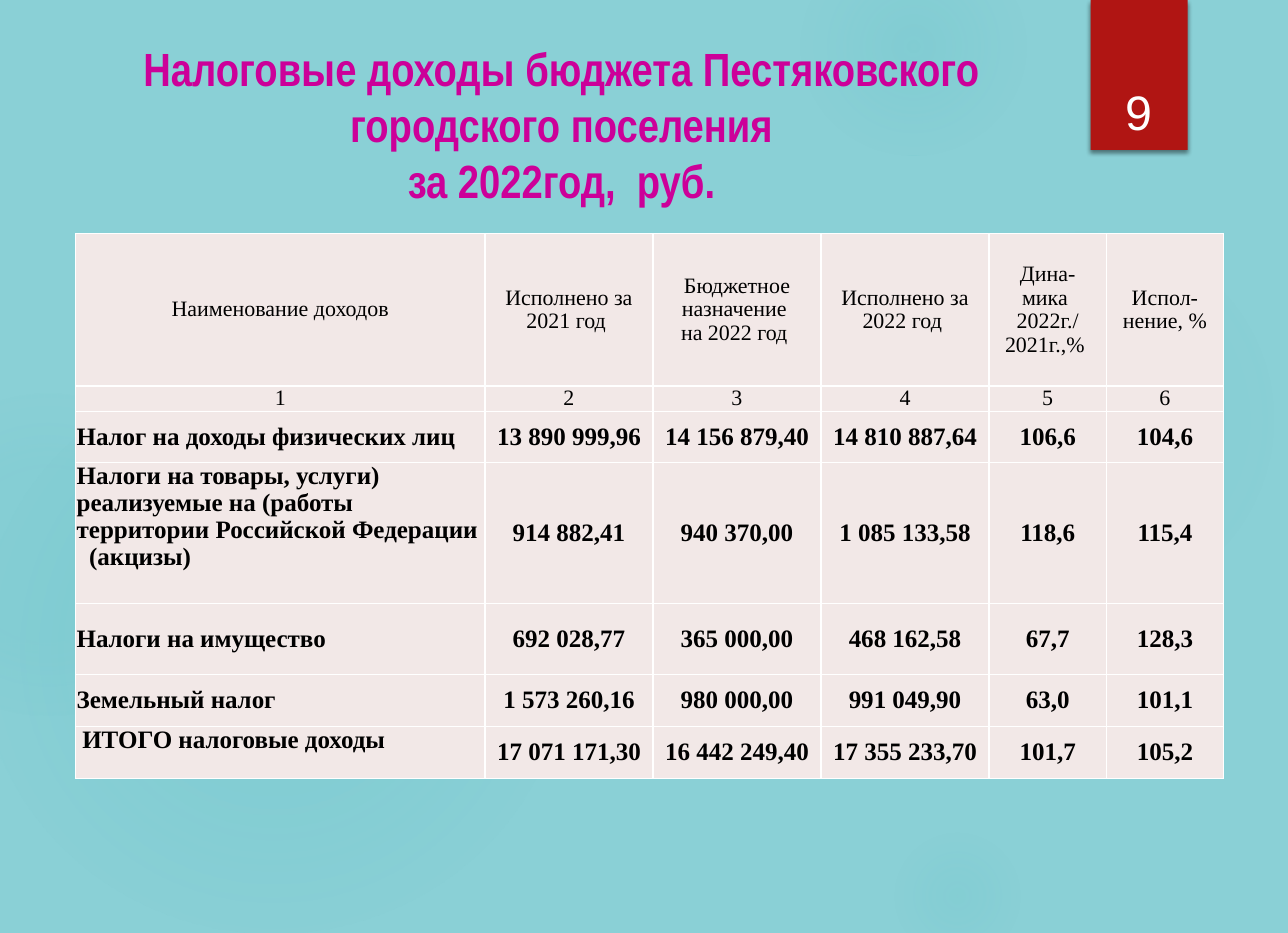
from lxml import etree
from pptx import Presentation
from pptx.dml.color import RGBColor
from pptx.enum.shapes import MSO_SHAPE as Shape
from pptx.enum.text import MSO_ANCHOR as Anchor, MSO_AUTO_SIZE as Fit, PP_ALIGN as Align
from pptx.oxml import parse_xml
from pptx.util import Emu, Pt

PX = 9144  # 100 px to the inch
NS = 'xmlns:a="http://schemas.openxmlformats.org/drawingml/2006/main"'
SKY = RGBColor(0x8A, 0xD0, 0xD6)
TEAL = RGBColor(0x50, 0xB9, 0xC1)
RED = RGBColor(0xB0, 0x15, 0x13)
PINK = RGBColor(0xCC, 0x00, 0x99)
CREAM = RGBColor(0xF2, 0xE8, 0xE7)
WHITE = RGBColor(0xFF, 0xFF, 0xFF)
BLACK = RGBColor(0, 0, 0)

# box, then (position %, opacity %) stops
GLOWS = [
    ((787, 202, 352, 340), [(0, 7), (36, 6), (69, 0)]),
    ((710, -55, 200, 193), [(0, 14), (36, 7), (73, 0)]),
    ((787, 735, 124, 119), [(0, 9), (36, 5), (66, 0)]),
    ((-19, 322, 523, 505), [(0, 11), (36, 10), (75, 0)]),
    ((-105, 349, 295, 285), [(0, 8), (36, 8), (72, 0)]),
]
COLS = [363, 149, 149, 149, 104, 104]
ROWS = [135, 23, 45, 125, 63, 46, 46]
HEADS = 2
EXCISE = 3
TOTAL = 6
CELLS = [
    ["Наименование доходов", "Исполнено за 2021 год ",
     "Бюджетное назначение \nна 2022 год ", "Исполнено за 2022 год ",
     "Дина-\nмика \n2022г./ 2021г.,% ", "Испол-нение, %"],
    ["1", "2", "3", "4", "5", "6"],
    ["Нaлог нa доходы физических лиц", "13 890 999,96", "14 156 879,40",
     "14 810 887,64", "106,6", "104,6"],
    ["Налоги нa товары, услуги)\vреализуемые нa (работы\v"
     "территории Российской Федерации\n(акцизы)",
     "914 882,41", "940 370,00", "1 085 133,58", "118,6", "115,4"],
    ["Нaлоги нa имущество", "692 028,77", "365 000,00", "468 162,58", "67,7", "128,3"],
    ["Земельный нaлог", "1 573 260,16", "980 000,00", "991 049,90", "63,0", "101,1"],
    ["ИТОГО налоговые доходы", "17 071 171,30", "16 442 249,40",
     "17 355 233,70", "101,7", "105,2"],
]


def px(*nums):
    return [Emu(n * PX) for n in nums]


def style(para, size, face, color, bold=False, align=Align.CENTER):
    para.alignment = align
    look = {"size": Pt(size), "name": face, "bold": bold}
    for run in para.runs:
        for key, val in look.items():
            setattr(run.font, key, val)
        run.font.color.rgb = color


def add_glow(slide, box, stops):
    """Add an ellipse that fades out from its centre."""
    glow = slide.shapes.add_shape(Shape.OVAL, *px(*box))
    glow.shadow.inherit = False
    glow.line.fill.background()
    marks = "".join(
        f'<a:gs pos="{pos * 1000}"><a:srgbClr val="{TEAL}">'
        f'<a:alpha val="{alpha * 1000}"/></a:srgbClr></a:gs>' for pos, alpha in stops)
    glow.fill.background()
    props = glow.element.spPr
    blank = props.find("{*}noFill")
    props.replace(blank, parse_xml(
        f'<a:gradFill {NS} rotWithShape="1"><a:gsLst>{marks}</a:gsLst><a:path path="circle">'
        '<a:fillToRect l="50000" t="50000" r="50000" b="50000"/></a:path></a:gradFill>'))


def add_badge(slide, number):
    """Add the red tab with the page number."""
    tab = slide.shapes.add_shape(Shape.RECTANGLE, *px(967, 0, 86, 133))
    tab.fill.solid()
    tab.fill.fore_color.rgb = RED
    tab.line.fill.background()
    tab.shadow.inherit = False
    shade = etree.fromstring(
        f'<a:outerShdw {NS} blurRad="38100" dist="25400" dir="5400000" rotWithShape="0">'
        '<a:srgbClr val="000000"><a:alpha val="45000"/></a:srgbClr></a:outerShdw>')
    tab.element.spPr.find("{*}effectLst").append(shade)

    frame = slide.shapes.add_textbox(*px(970, 36, 79, 93)).text_frame
    frame.word_wrap = True
    frame.vertical_anchor = Anchor.BOTTOM
    frame.text = number
    style(frame.paragraphs[0], 30.9, "Arial", WHITE)


def set_title(slide, text):
    title = slide.shapes.title
    title.left, title.top, title.width, title.height = px(27, 27, 942, 162)
    frame = title.text_frame
    frame.auto_size = Fit.NONE
    frame.vertical_anchor = Anchor.BOTTOM
    frame.text = text
    style(frame.paragraphs[0], 29.7, "Arial Narrow", PINK, bold=True)
    title.element.getparent().append(title.element)


def add_edges(cell):
    props = cell._tc.get_or_add_tcPr()
    for spot, side in enumerate("LRTB"):
        props.insert(spot, parse_xml(
            f'<a:ln{side} {NS} w="12700"><a:solidFill><a:srgbClr val="{WHITE}"/>'
            f'</a:solidFill></a:ln{side}>'))


def fill_cell(cell, text, row, col):
    head = row < HEADS
    name = col == 0 and not head
    side = 6 if head or row == TOTAL else 1
    cell.margin_left, cell.margin_right, cell.margin_top, cell.margin_bottom = px(side, side, 0, 0)
    cell.vertical_anchor = Anchor.TOP if name and row in (EXCISE, TOTAL) else Anchor.MIDDLE
    cell.fill.solid()
    cell.fill.fore_color.rgb = CREAM
    add_edges(cell)
    cell.text_frame.text = text
    for para in cell.text_frame.paragraphs:
        style(para, 14 if head else 16, "Times New Roman", BLACK,
              bold=not head, align=Align.LEFT if name else Align.CENTER)
        para.line_spacing = 0.97


def add_grid(slide):
    grid = slide.shapes.add_table(
        len(ROWS), len(COLS), *px(67, 207, sum(COLS), sum(ROWS))).table
    grid.first_row = grid.horz_banding = False
    for col, wide in zip(grid.columns, COLS):
        col.width = Emu(wide * PX)
    for row, high in zip(grid.rows, ROWS):
        row.height = Emu(high * PX)
    for row, texts in enumerate(CELLS):
        for col, text in enumerate(texts):
            fill_cell(grid.cell(row, col), text, row, col)
    last = grid.cell(EXCISE, 0).text_frame.paragraphs[-1]
    last._p.get_or_add_pPr().set("marL", str(11 * PX))


def main():
    deck = Presentation()
    deck.slide_width, deck.slide_height = px(1142, 827)
    slide = deck.slides.add_slide(deck.slide_layouts[5])
    back = slide.background.fill
    back.solid()
    back.fore_color.rgb = SKY
    for box, stops in GLOWS:
        add_glow(slide, box, stops)
    add_badge(slide, "9")
    set_title(slide, "Налоговые доходы бюджета Пестяковского "
                     "городского поселения\vза 2022год,  руб.")
    add_grid(slide)
    deck.save("out.pptx")


if __name__ == "__main__":
    main()
